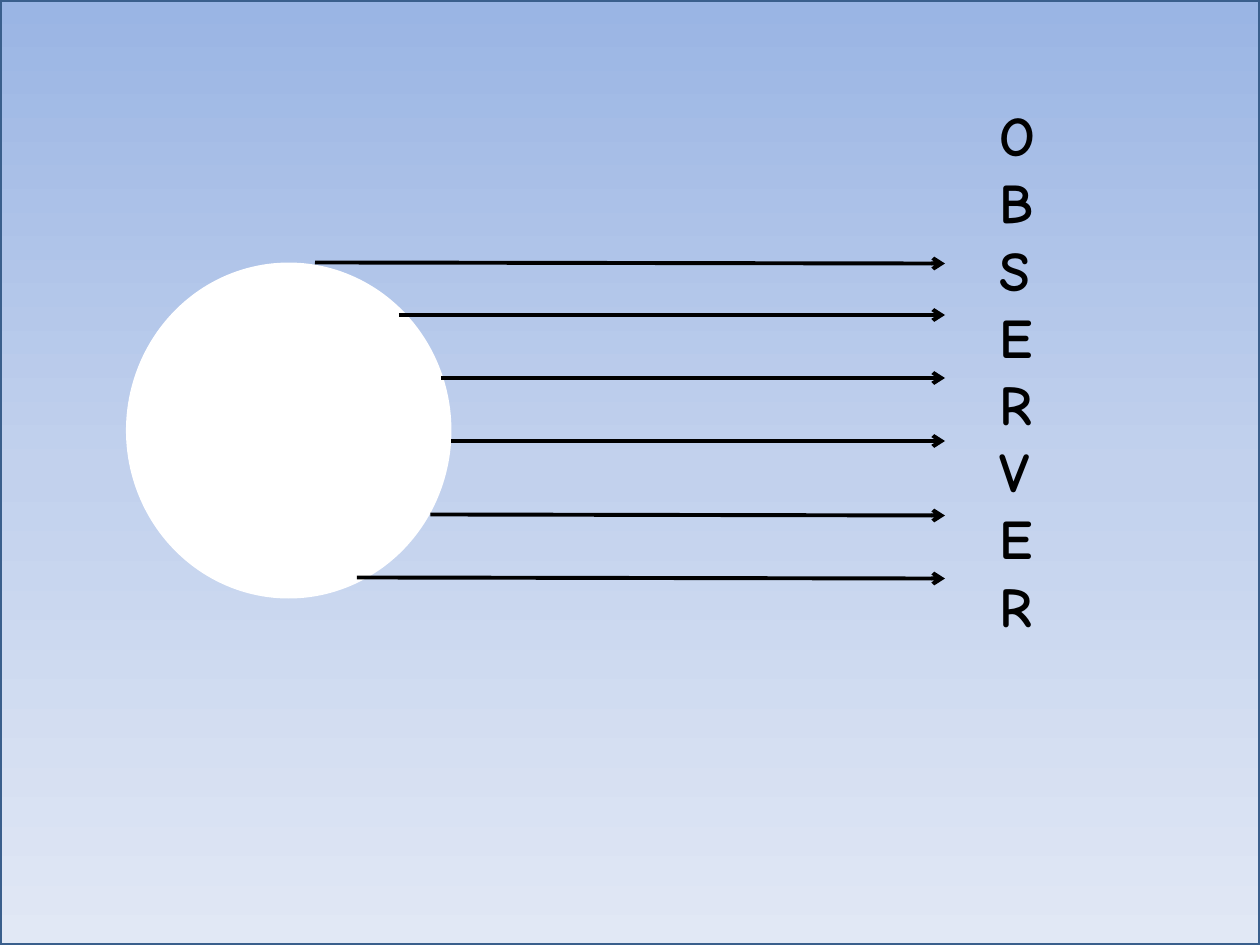
from copy import deepcopy

from lxml import etree
from pptx import Presentation
from pptx import util as u
from pptx.dml.color import RGBColor
from pptx.enum import shapes, text
from pptx.oxml.ns import qn

PX = u.Inches(1) // 120
SLIDE = (0, 0, 1200, 900)
SKY = [(0, "9AB5E4"), (0.5, "C2D1ED"), (1, "E1E8F5")]
RAY_END = 900
# Start x, start y and drop of each ray, from top to bottom
RAYS = [(300, 250, 1), (380, 300, 0), (420, 360, 0),
        (430, 420, 0), (410, 490, 1), (340, 550, 1)]


def px(*lengths):
    return [length * PX for length in lengths]


def color(hex_value):
    return RGBColor.from_string(hex_value)


def add_plain_shape(slide, kind, box):
    shape = slide.shapes.add_shape(kind, *px(*box))
    shape.shadow.inherit = False
    return shape


def add_sky(slide, box):
    sky = add_plain_shape(slide, shapes.MSO_SHAPE.RECTANGLE, box)
    sky.fill.gradient()
    sky.fill.gradient_angle = 270
    stop_list = sky.fill._fill._gradFill.find(qn("a:gsLst"))
    stop_list.append(deepcopy(stop_list[-1]))
    for stop, (position, shade) in zip(sky.fill.gradient_stops, SKY):
        stop.position = position
        stop.color.rgb = color(shade)
    sky.line.color.rgb = color("3A5F8C")
    sky.line.width = u.Pt(2)


def add_star(slide, box):
    star = add_plain_shape(slide, shapes.MSO_SHAPE.OVAL, box)
    star.fill.solid()
    star.fill.fore_color.rgb = color("FFFFFF")
    star.line.fill.background()


def add_ray(slide, x, y, drop):
    ray = slide.shapes.add_connector(
        shapes.MSO_CONNECTOR.STRAIGHT, *px(x, y, RAY_END, y + drop))
    ray.line.color.rgb = color("000000")
    ray.line.width = u.Pt(2.25)
    etree.SubElement(ray.line._get_or_add_ln(), qn("a:tailEnd"), type="arrow")
    etree.SubElement(ray._element.spPr, qn("a:effectLst"))


def add_observer(slide, box):
    frame = slide.shapes.add_textbox(*px(*box)).text_frame
    frame.word_wrap = True
    frame.auto_size = text.MSO_AUTO_SIZE.SHAPE_TO_FIT_TEXT
    # Letters stacked upright
    frame._txBody.bodyPr.set("vert", "wordArtVert")
    observer = frame.paragraphs[0].add_run()
    observer.text = "OBSERVER"
    for name, value in {"name": "Comic Neue", "size": u.Pt(32), "bold": True}.items():
        setattr(observer.font, name, value)
    observer.font.color.rgb = color("000000")


def main():
    prs = Presentation()
    prs.slide_width, prs.slide_height = px(*SLIDE[2:])
    slide = prs.slides.add_slide(prs.slide_layouts[6])
    add_sky(slide, SLIDE)
    add_star(slide, (120, 250, 310, 320))
    for ray in RAYS:
        add_ray(slide, *ray)
    add_observer(slide, (940, 90, 102, 710))
    prs.save("out.pptx")


if __name__ == "__main__":
    main()
